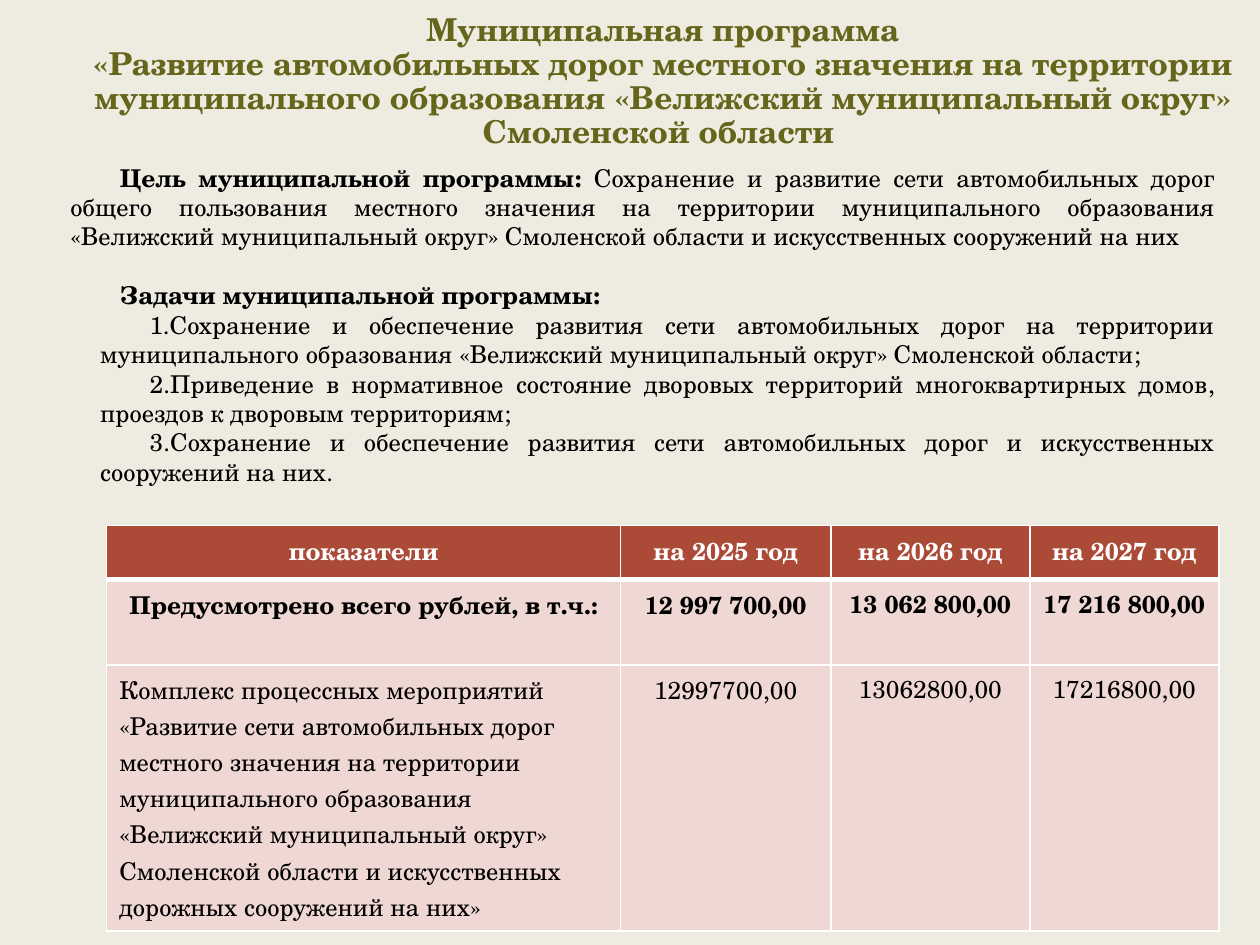
from lxml import etree
from pptx import Presentation
from pptx.dml.color import RGBColor
from pptx.enum.text import MSO_ANCHOR, PP_ALIGN
from pptx.oxml.ns import qn
from pptx.util import Cm, Pt

LEFT, CENTER, JUSTIFY = PP_ALIGN.LEFT, PP_ALIGN.CENTER, PP_ALIGN.JUSTIFY
MIDDLE = MSO_ANCHOR.MIDDLE
FONT = "TeX Gyre Schola"


def rgb(value):
    return RGBColor.from_string(value)


def add_run(p, text, color="000000", **formats):
    r = p.add_run()
    r.text = text
    for name, value in {"name": FONT, "size": Pt(14), "bold": False, **formats}.items():
        setattr(r.font, name, value)
    r.font.color.rgb = rgb(color)


prs = Presentation()
prs.slide_width, prs.slide_height = Cm(25.4), Cm(19.05)
s = prs.slides.add_slide(prs.slide_layouts[6])
s.background.fill.solid()
s.background.fill.fore_color.rgb = rgb("EEECE1")

frames = []
for left, top, width, height in [(1.3, 0.41, 24.13, 2.49), (1.17, 2.92, 23.57, 7.24)]:
    tf = s.shapes.add_textbox(Cm(left), Cm(top), Cm(width), Cm(height)).text_frame
    tf.word_wrap = True
    tf.vertical_anchor = MIDDLE
    frames.append(tf)
title, body = frames

p = title.paragraphs[0]
p.alignment = CENTER
p.line_spacing = 0.9
add_run(p, "Муниципальная программа", "65651B", size=Pt(18), bold=True)
p.add_line_break()
add_run(p, "«Развитие автомобильных дорог местного значения на территории муниципального образования "
        "«Велижский муниципальный округ» Смоленской области ", "65651B", size=Pt(18), bold=True)

goal = body.paragraphs[0]
add_run(goal, "Цель муниципальной программы: ", bold=True)
add_run(goal, "Сохранение и развитие сети автомобильных дорог общего пользования местного значения "
        "на территории муниципального образования «Велижский муниципальный округ» "
        "Смоленской области и искусственных сооружений на них")
heading = body.add_paragraph()
heading.space_before = Pt(16.8)
add_run(heading, "Задачи муниципальной программы:", bold=True)

tasks = [
    "Сохранение и обеспечение развития сети автомобильных дорог на территории муниципального "
    "образования «Велижский муниципальный округ» Смоленской области;",
    "Приведение в нормативное состояние дворовых территорий многоквартирных домов, "
    "проездов к дворовым территориям;",
    "Сохранение и обеспечение развития сети автомобильных дорог и искусственных сооружений на них.",
]
for task in tasks:
    p = body.add_paragraph()
    add_run(p, task)
    pPr = p._p.get_or_add_pPr()
    pPr.set("marL", str(Cm(0.6)))
    etree.SubElement(pPr, qn("a:buFont"), typeface="+mj-lt")
    etree.SubElement(pPr, qn("a:buAutoNum"), type="arabicPeriod")
for p in body.paragraphs:
    p.alignment = JUSTIFY
    p._p.get_or_add_pPr().set("indent", str(Cm(1)))

rows = [
    ["показатели", "на 2025 год", "на 2026 год", "на 2027 год"],
    ["Предусмотрено всего рублей, в т.ч.:", "12 997 700,00", "13 062 800,00", "17 216 800,00"],
    ["Комплекс процессных мероприятий «Развитие сети автомобильных дорог местного значения "
     "на территории муниципального образования «Велижский муниципальный округ» "
     "Смоленской области и искусственных дорожных сооружений на них»",
     "12997700,00", "13062800,00", "17216800,00"],
]
col_widths = [10.36, 4.24, 4.01, 3.81]
row_heights = [1.09, 1.73, 5.36]
table = s.shapes.add_table(len(rows), len(col_widths), Cm(2.15), Cm(10.59),
                           Cm(sum(col_widths)), Cm(sum(row_heights))).table
for column, width in zip(table.columns, col_widths):
    column.width = Cm(width)
for row, height in zip(table.rows, row_heights):
    row.height = Cm(height)

for i, texts in enumerate(rows):
    for j, text in enumerate(texts):
        cell = table.cell(i, j)
        header = i == 0
        p = cell.text_frame.paragraphs[0]
        p.alignment = LEFT if (i, j) == (2, 0) else CENTER
        if j > 1 and not header:
            for side in ("left", "right", "top", "bottom"):
                setattr(cell, f"margin_{side}", 0)
            p.line_spacing = 1.15
        add_run(p, text, "FFFFFF" if header else "000000", bold=i < 2)
        tcPr = cell._tc.get_or_add_tcPr()
        for side in ("L", "R", "T", "B"):
            thick = (i, side) in ((0, "B"), (1, "T"))
            ln = etree.SubElement(tcPr, qn(f"a:ln{side}"), w=str(Pt(3 if thick else 1)))
            fill = etree.SubElement(ln, qn("a:solidFill"))
            etree.SubElement(fill, qn("a:srgbClr"), val="FFFFFF")
        cell.fill.solid()
        cell.fill.fore_color.rgb = rgb("AB4A37" if header else "EFD7D3")

prs.save("out.pptx")
